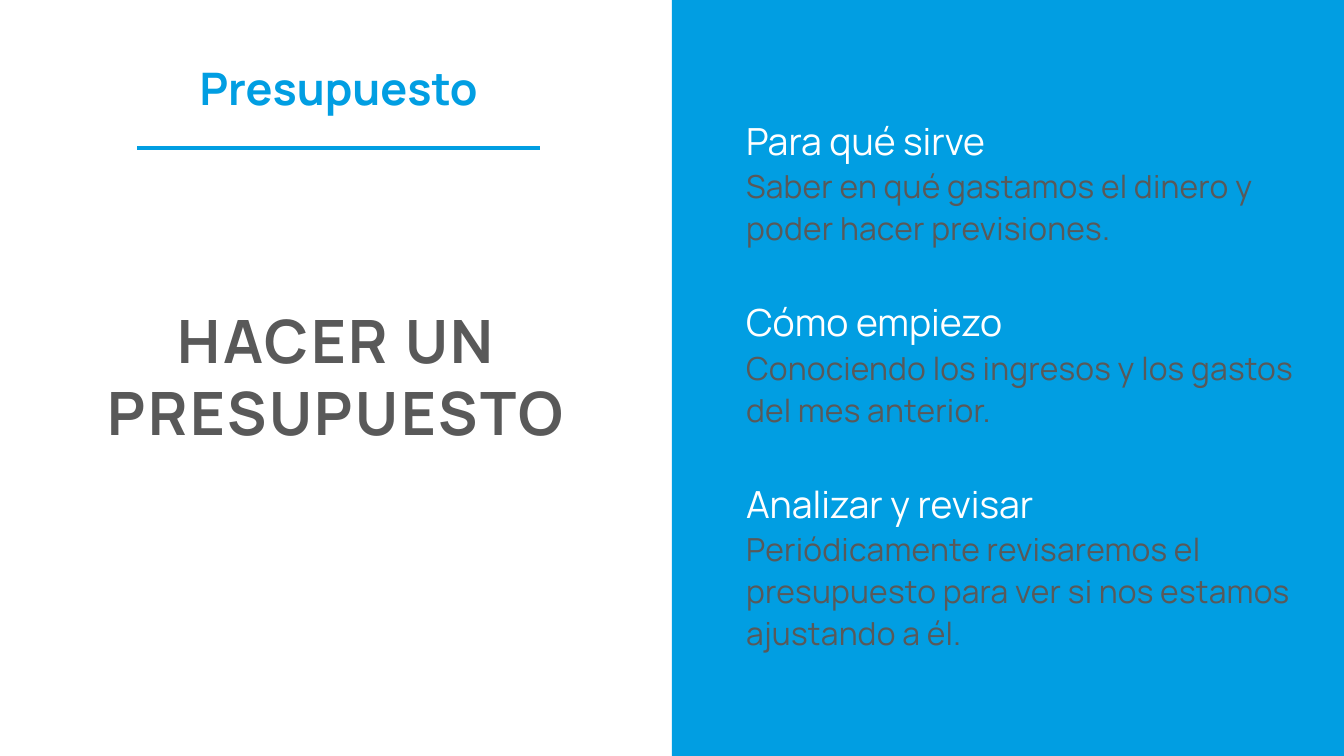
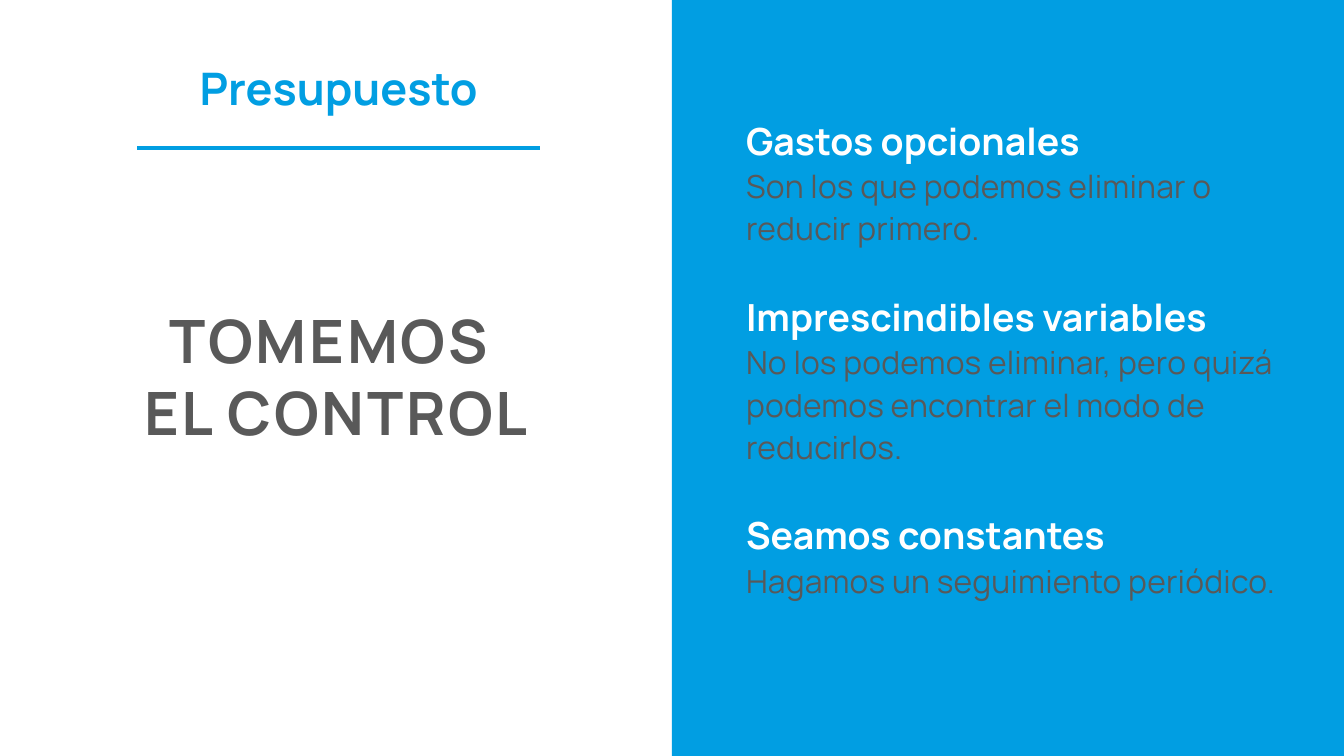
import pptx
import pptx.util
import pptx.dml.color
import pptx.enum.shapes
import pptx.enum.text
from lxml import etree

Cm = pptx.util.Cm
Pt = pptx.util.Pt
RGBColor = pptx.dml.color.RGBColor
Align = pptx.enum.text.PP_ALIGN

SECTION = "Presupuesto"
SLIDES = [
    {
        "title": ["HACER UN", "PRESUPUESTO"],
        "bold": False,
        "gap": 0.96,
        "topics": [
            ("Para qué sirve", "Saber en qué gastamos el dinero y poder hacer previsiones.", 2),
            ("Cómo empiezo", "Conociendo los ingresos y los gastos del mes anterior.", 2),
            ("Analizar y revisar", "Periódicamente revisaremos el presupuesto para ver si nos estamos ajustando a él.", 3),
        ],
    },
    {
        "title": ["TOMEMOS ", "EL CONTROL"],
        "bold": True,
        "gap": 0.86,
        "topics": [
            ("Gastos opcionales", "Son los que podemos eliminar o reducir primero.", 2),
            ("Imprescindibles variables", "No los podemos eliminar, pero quizá podemos encontrar el modo de reducirlos.", 3),
            ("Seamos constantes", "Hagamos un seguimiento periódico.", 2),
        ],
    },
]

FONT = "Manrope"
BLUE = RGBColor(0x01, 0x9E, 0xE2)
GREY = RGBColor(0x59, 0x59, 0x59)
WHITE = RGBColor(0xFF, 0xFF, 0xFF)

WIDTH, HEIGHT = 25.4, 14.29
HALF = WIDTH / 2
TOPIC_LEFT, TOPIC_TOP, TOPIC_WIDTH = 14.1, 2.21, 10.52
HEADING_HEIGHT, HEADING_STEP, LINE_HEIGHT = 0.84, 0.87, 0.8
RULE_LEFT, RULE_RIGHT, RULE_TOP = 2.59, 10.21, 2.79


def write(s, lines, box, size, color, bold=False, align=Align.LEFT,
          leading=None, tracking=0, sp=None):
    box = [Cm(v) for v in box]
    if sp is None:
        sp = s.shapes.add_textbox(*box)
    sp.left, sp.top, sp.width, sp.height = box
    tf = sp.text_frame
    tf.word_wrap = True
    tf.auto_size = pptx.enum.text.MSO_AUTO_SIZE.SHAPE_TO_FIT_TEXT
    tf.vertical_anchor = pptx.enum.text.MSO_ANCHOR.TOP
    tf.margin_left = tf.margin_top = tf.margin_right = tf.margin_bottom = 0
    for i, line in enumerate(lines):
        p = tf.add_paragraph() if i else tf.paragraphs[0]
        p.alignment = align
        if leading:
            p.line_spacing = Pt(leading)
        r = p.add_run()
        r.text = line
        r.font.name = FONT
        r.font.size = Pt(size)
        r.font.bold = bold
        r.font.color.rgb = color
        if tracking:
            r.font._element.set("spc", str(round(tracking * 100)))


def add_panel(s):
    sp = s.shapes.add_shape(pptx.enum.shapes.MSO_SHAPE.RECTANGLE,
                            Cm(HALF), 0, Cm(HALF), Cm(HEIGHT))
    sp.shadow.inherit = False
    sp.fill.solid()
    sp.fill.fore_color.rgb = BLUE
    sp.line.fill.background()


def add_rule(s):
    line = s.shapes.add_connector(pptx.enum.shapes.MSO_CONNECTOR.STRAIGHT,
                                  Cm(RULE_LEFT), Cm(RULE_TOP), Cm(RULE_RIGHT), Cm(RULE_TOP))
    line.line.color.rgb = BLUE
    line.line.width = Pt(2.25)
    etree.SubElement(line._element.spPr, pptx.oxml.ns.qn("a:effectLst"))


def add_topics(s, topics, bold, gap):
    top = TOPIC_TOP
    for heading, body, lines in topics:
        write(s, [heading], (TOPIC_LEFT, top, TOPIC_WIDTH, HEADING_HEIGHT),
              20, WHITE, bold=bold, leading=24.6)
        top += HEADING_STEP
        height = lines * LINE_HEIGHT
        write(s, [body], (TOPIC_LEFT, top, TOPIC_WIDTH, height),
              17, GREY, leading=22.6, tracking=0.1)
        top += height + gap


def main():
    prs = pptx.Presentation()
    prs.slide_width, prs.slide_height = Cm(WIDTH), Cm(HEIGHT)
    for content in SLIDES:
        s = prs.slides.add_slide(prs.slide_layouts[5])
        s.background.fill.solid()
        s.background.fill.fore_color.rgb = WHITE
        add_panel(s)
        add_topics(s, content["topics"], content["bold"], content["gap"])
        write(s, content["title"], (0, 5.74, HALF, 2.74), 32, GREY, bold=True,
              align=Align.CENTER, tracking=1.4, sp=s.shapes.title)
        write(s, [SECTION], (0.15, 1.14, 12.5, 1.02), 24, BLUE, bold=True,
              align=Align.CENTER)
        add_rule(s)
    prs.save("out.pptx")


if __name__ == "__main__":
    main()
